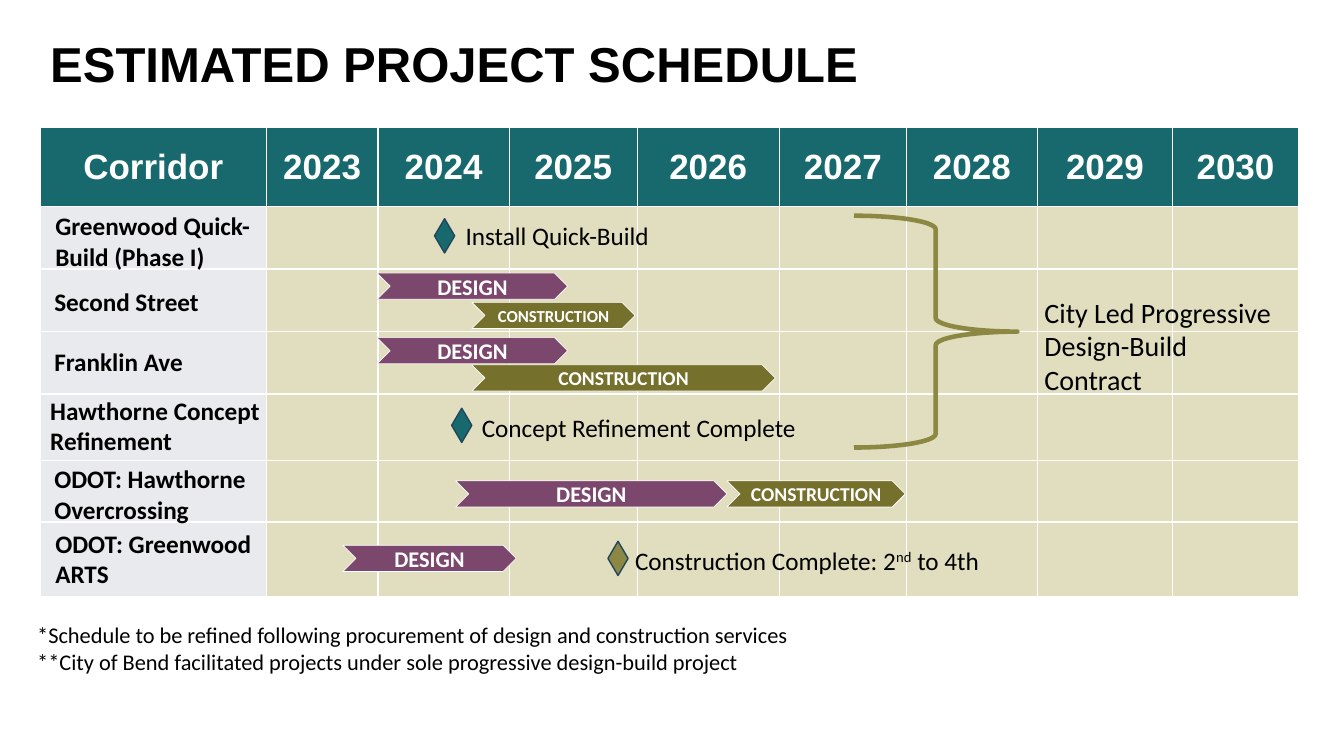
from lxml import etree
from pptx import Presentation
from pptx.dml.color import RGBColor
from pptx.enum.shapes import MSO_SHAPE
from pptx.enum.text import MSO_ANCHOR, PP_ALIGN
from pptx.oxml.ns import qn
from pptx.util import Inches, Pt

CHEVRON, DIAMOND, BRACE = MSO_SHAPE.CHEVRON, MSO_SHAPE.DIAMOND, MSO_SHAPE.RIGHT_BRACE
MIDDLE, BOTTOM, CENTER = MSO_ANCHOR.MIDDLE, MSO_ANCHOR.BOTTOM, PP_ALIGN.CENTER

COLORS = {
    "teal": "18696D", "gray": "E8EAED", "sand": "E0DEBE", "olive": "75702B",
    "plum": "7B476C", "khaki": "8C8843", "navy": "20455F",
    "white": "FFFFFF", "black": "000000",
}
TITLE = "ESTIMATED PROJECT SCHEDULE"
HEADS = ["Corridor"] + [str(year) for year in range(2023, 2031)]
WIDTHS = [2.24, 1.11, 1.3, 1.27, 1.41, 1.26, 1.3, 1.34, 1.25]
HEIGHTS = [0.79, 0.62, 0.62, 0.62, 0.66, 0.61, 0.74]

ROWS = [
    ("Greenwood Quick-Build (Phase I)", 0.45, 2.04, 0.71),
    ("Second Street", 0.44, 2.79, 0.4),
    ("Franklin Ave", 0.44, 3.39, 0.4),
    ("Hawthorne Concept Refinement", 0.4, 3.87, 0.71),
    ("ODOT: Hawthorne Overcrossing", 0.44, 4.55, 0.71),
    ("ODOT: Greenwood ARTS", 0.45, 5.19, 0.71),
]
PHASES = {"DESIGN": "plum", "CONSTRUCTION": "olive"}
BARS = [
    ("CONSTRUCTION", 4.68, 3, 1.62, 12),
    ("DESIGN", 3.74, 2.71, 1.89, 16),
    ("DESIGN", 4.52, 4.77, 2.69, 16),
    ("CONSTRUCTION", 7.21, 4.77, 1.77, 14),
    ("DESIGN", 3.74, 3.35, 1.89, 16),
    ("CONSTRUCTION", 4.68, 3.62, 3.01, 14),
    ("DESIGN", 3.4, 5.41, 1.72, 16),
]
MARKS = [(4.31, 2.17, "teal"), (4.48, 4.05, "teal"), (6.03, 5.37, "khaki")]
NOTES = [
    (["Install Quick-Build"], 4.52, 2.14, 3.5, 0.4, 18),
    (["Concept Refinement Complete"], 4.68, 4.04, 3.89, 0.4, 18),
    (["City Led Progressive Design-Build Contract"], 10.26, 2.88, 2.48, 1.11, 20),
    (["*Schedule to be refined following procurement of design and construction services",
      "**City of Bend facilitated projects under sole progressive design-build project"],
     0.27, 6.11, 7.89, 0.64, 16),
]
FINISH = [("Construction Complete: 2", 0), ("nd", 30000), (" to 4th", 0)]


def rgb(name):
    return RGBColor.from_string(COLORS[name])


def style(par, size, color="black", bold=False, face="Calibri"):
    font = par.font
    font.name, font.size, font.bold = face, Pt(size), bold
    font.color.rgb = rgb(color)


def add_text(lines, x, y, w, h, size, bold=False, face="Calibri"):
    box = slide.shapes.add_textbox(Inches(x), Inches(y), Inches(w), Inches(h))
    frame = box.text_frame
    frame.word_wrap = True
    frame.text = "\n".join(lines)
    for par in frame.paragraphs:
        style(par, size, bold=bold, face=face)
    return frame


def add_part(kind, x, y, w, h, fill, line, width):
    part = slide.shapes.add_shape(kind, Inches(x), Inches(y), Inches(w), Inches(h))
    part.shadow.inherit = False
    if fill:
        part.fill.solid()
        part.fill.fore_color.rgb = rgb(fill)
    else:
        part.fill.background()
    part.line.color.rgb = rgb(line)
    part.line.width = Pt(width)
    return part


def paint(cell, fill):
    props = cell._tc.get_or_add_tcPr()
    for side in ("a:lnL", "a:lnR", "a:lnT", "a:lnB"):
        edge = etree.SubElement(props, qn(side), w=str(Pt(1)))
        solid = etree.SubElement(edge, qn("a:solidFill"))
        etree.SubElement(solid, qn("a:srgbClr"), val=COLORS["white"])
    cell.fill.solid()
    cell.fill.fore_color.rgb = rgb(fill)


deck = Presentation()
deck.slide_width, deck.slide_height = Inches(13.33), Inches(7.5)
slide = deck.slides.add_slide(deck.slide_layouts[6])

head = add_text([TITLE], 0.4, 0.32, 11.5, 0.65, 35, True, "Arial")
head.vertical_anchor = BOTTOM
head.paragraphs[0].line_spacing = 0.9

grid = slide.shapes.add_table(
    len(HEIGHTS), len(WIDTHS), Inches(0.4), Inches(1.26),
    Inches(sum(WIDTHS)), Inches(sum(HEIGHTS))).table
for col, width in zip(grid.columns, WIDTHS):
    col.width = Inches(width)
for r, height in enumerate(HEIGHTS):
    grid.rows[r].height = Inches(height)
    for c, label in enumerate(HEADS):
        cell = grid.cell(r, c)
        if r == 0:
            cell.text = label
            cell.vertical_anchor = MIDDLE
            cell.margin_left = cell.margin_right = cell.margin_top = Inches(0.01)
            cell.margin_bottom = 0
            par = cell.text_frame.paragraphs[0]
            par.alignment = CENTER
            style(par, 25, "white", True, "Arial")
        paint(cell, "teal" if r == 0 else "sand" if c else "gray")

for label, x, y, h in ROWS:
    add_text([label], x, y, 2.57, h, 18, True)

for label, x, y, w, size in BARS:
    bar = add_part(CHEVRON, x, y, w, 0.26, PHASES[label], "white", 0.5)
    frame = bar.text_frame
    frame.word_wrap = False
    frame.vertical_anchor = MIDDLE
    frame.text = label
    frame.paragraphs[0].alignment = CENTER
    style(frame.paragraphs[0], size, "white", True)

for x, y, fill in MARKS:
    add_part(DIAMOND, x, y, 0.2, 0.34, fill, "navy", 1)

for note in NOTES:
    add_text(*note)

par = add_text([], 6.2, 5.36, 3.89, 0.4, 18).paragraphs[0]
for words, rise in FINISH:
    run = par.add_run()
    run.text = words
    if rise:
        run._r.get_or_add_rPr().set("baseline", str(rise))

add_part(BRACE, 8.47, 2.14, 1.62, 2.3, None, "khaki", 3.25)

deck.save("out.pptx")
